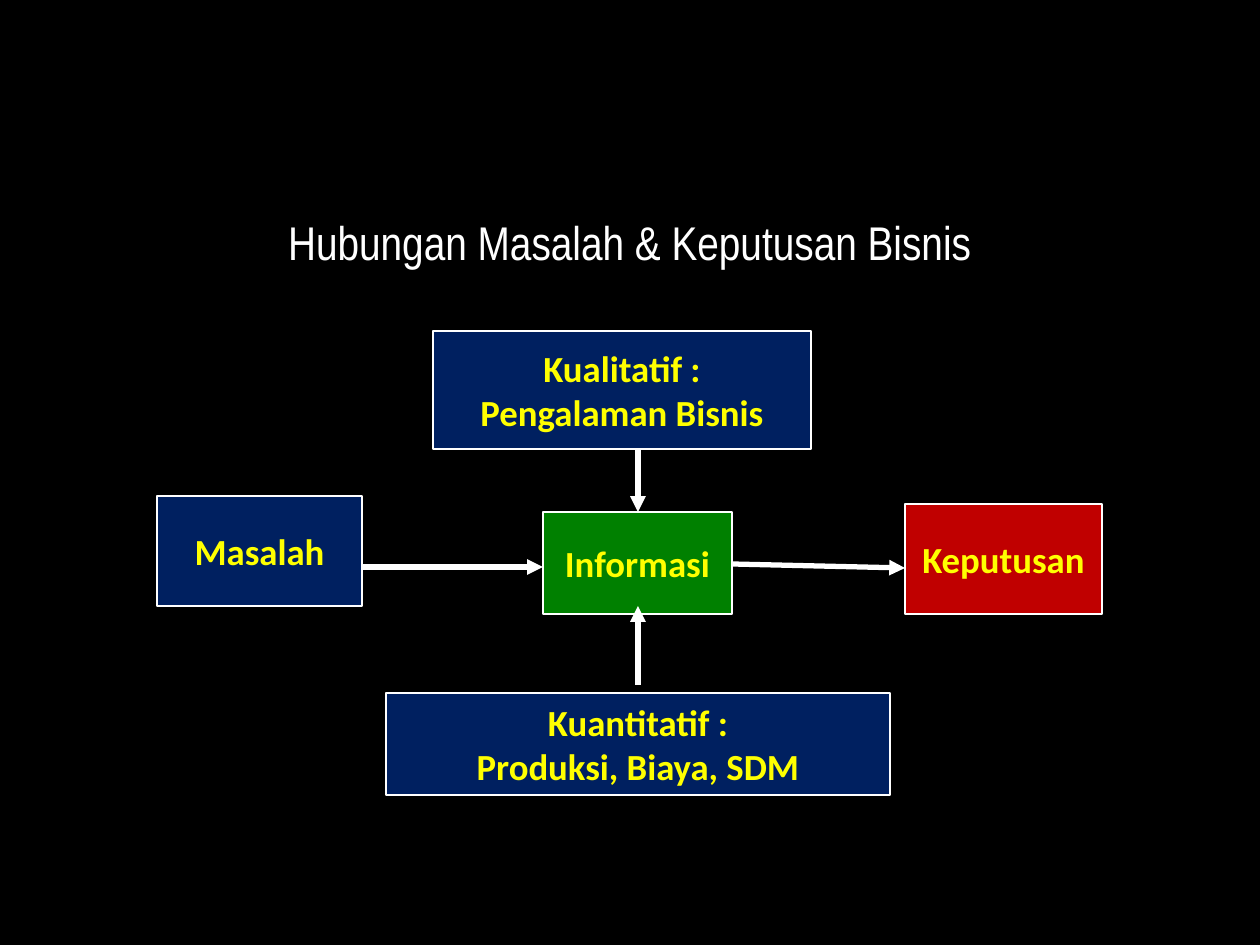
from dataclasses import dataclass

from lxml import etree
from pptx import Presentation
from pptx.dml.color import RGBColor
from pptx.enum.shapes import MSO_CONNECTOR, MSO_SHAPE
from pptx.enum.text import MSO_ANCHOR, MSO_AUTO_SIZE, PP_ALIGN
from pptx.oxml.ns import qn
from pptx.util import Pt

RECTANGLE = MSO_SHAPE.RECTANGLE
STRAIGHT = MSO_CONNECTOR.STRAIGHT
CENTER = PP_ALIGN.CENTER
MIDDLE, BOTTOM = MSO_ANCHOR.MIDDLE, MSO_ANCHOR.BOTTOM
NO_AUTOFIT = MSO_AUTO_SIZE.NONE

TITLE = "Hubungan Masalah & Keputusan Bisnis"
TITLE_BOX = (157, 118, 945, 158)

BOXES = [
    ("Informasi", "green", (543, 512, 189, 102)),
    ("Keputusan", "red", (905, 504, 197, 110)),
    ("Masalah", "navy", (157, 496, 205, 110)),
    ("Kualitatif :\nPengalaman Bisnis", "navy", (433, 331, 378, 118)),
    ("Kuantitatif :\nProduksi, Biaya, SDM", "navy", (386, 693, 504, 102)),
]

ARROWS = [
    ((638, 449), (638, 512)),
    ((638, 685), (638, 606)),
    ((362, 567), (543, 567)),
    ((732, 564), (905, 568)),
]


@dataclass(frozen=True)
class Theme:
    black: RGBColor = RGBColor.from_string("000000")
    white: RGBColor = RGBColor.from_string("FFFFFF")
    yellow: RGBColor = RGBColor.from_string("FFFF00")
    green: RGBColor = RGBColor.from_string("008000")
    red: RGBColor = RGBColor.from_string("C00000")
    navy: RGBColor = RGBColor.from_string("002060")
    title_font: str = "Arial Narrow"
    box_font: str = "Calibri"
    title_size: Pt = Pt(27)
    box_size: Pt = Pt(21)
    border: Pt = Pt(0.75)
    arrow: Pt = Pt(3)


THEME = Theme()
TITLE_FORMAT = {"name": THEME.title_font, "size": THEME.title_size, "bold": False}
BOX_FORMAT = {"name": THEME.box_font, "size": THEME.box_size, "bold": True}


def emu(*pixels):
    return [round(value * 914400 / 126) for value in pixels]


def write_text(shape, text, font_format, color, frame_format, paragraph_format):
    frame = shape.text_frame
    frame.text = text
    for name, value in frame_format.items():
        setattr(frame, name, value)
    for paragraph in frame.paragraphs:
        for name, value in paragraph_format.items():
            setattr(paragraph, name, value)
        for run in paragraph.runs:
            for name, value in font_format.items():
                setattr(run.font, name, value)
            run.font.color.rgb = color


def set_line(shape, width):
    shape.line.color.rgb = THEME.white
    shape.line.width = width


def add_title(slide):
    title = slide.shapes.title
    title.left, title.top, title.width, title.height = emu(*TITLE_BOX)
    write_text(
        title, TITLE, TITLE_FORMAT, THEME.white,
        {"vertical_anchor": BOTTOM, "auto_size": NO_AUTOFIT, "word_wrap": True},
        {"alignment": CENTER, "space_before": Pt(4)},
    )


def add_box(slide, text, color_name, bounds):
    box = slide.shapes.add_shape(RECTANGLE, *emu(*bounds))
    box.shadow.inherit = False
    box.fill.solid()
    box.fill.fore_color.rgb = getattr(THEME, color_name)
    set_line(box, THEME.border)
    write_text(
        box, text, BOX_FORMAT, THEME.yellow,
        {"vertical_anchor": MIDDLE, "word_wrap": False}, {"alignment": CENTER},
    )


def add_arrow(slide, start, end):
    arrow = slide.shapes.add_connector(STRAIGHT, *emu(*start, *end))
    set_line(arrow, THEME.arrow)
    etree.SubElement(arrow.line._get_or_add_ln(), qn("a:tailEnd"), type="triangle")
    etree.SubElement(arrow._element.spPr, qn("a:effectLst"))


def main():
    presentation = Presentation()
    presentation.slide_width, presentation.slide_height = emu(1260, 945)
    slide = presentation.slides.add_slide(presentation.slide_layouts[0])
    background = slide.background.fill
    background.solid()
    background.fore_color.rgb = THEME.black
    subtitle = slide.placeholders[1].element
    subtitle.getparent().remove(subtitle)

    add_title(slide)
    for box in BOXES:
        add_box(slide, *box)
    for arrow in ARROWS:
        add_arrow(slide, *arrow)
    presentation.save("out.pptx")


if __name__ == "__main__":
    main()
